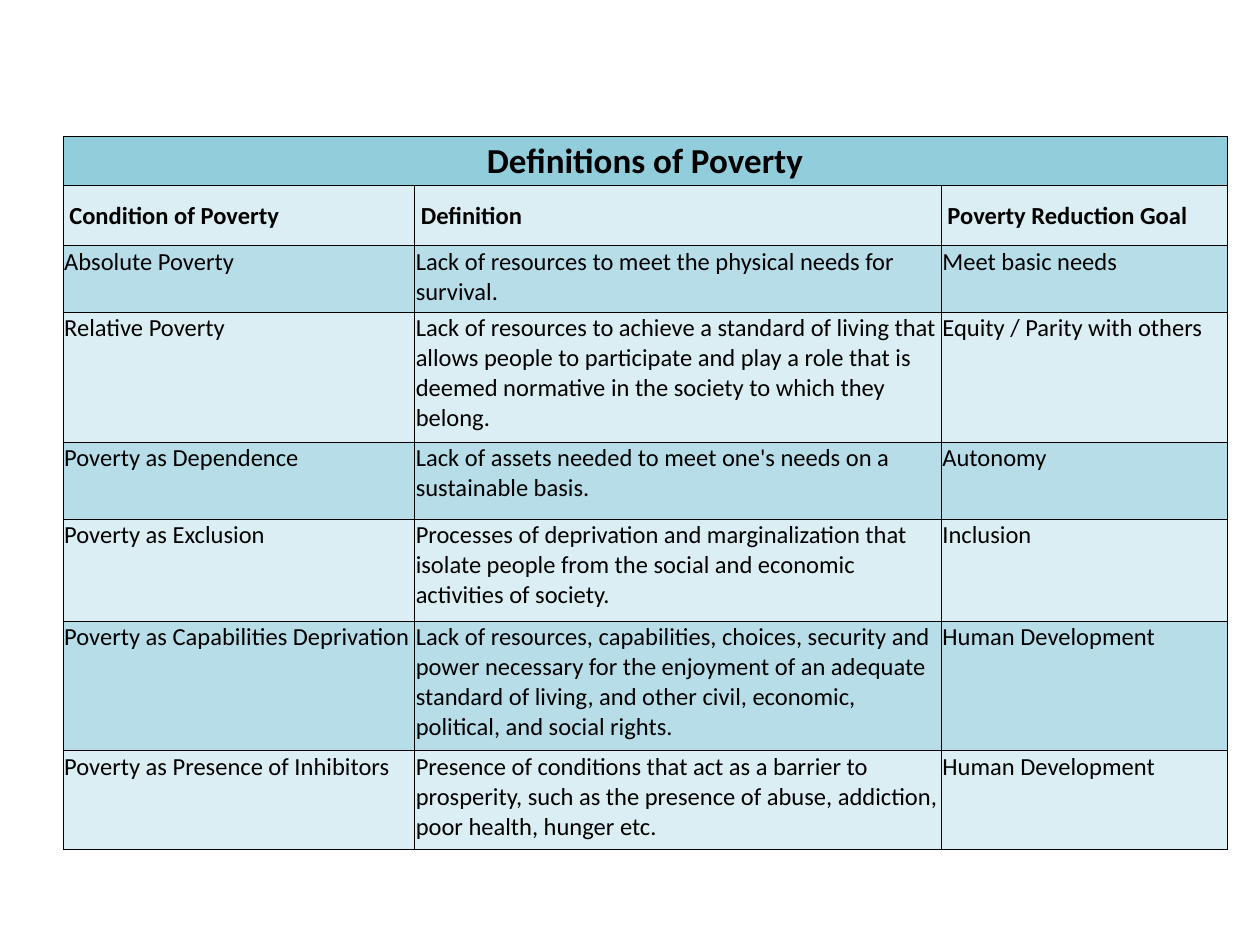
from dataclasses import dataclass

from lxml.etree import SubElement
from pptx import Presentation
from pptx.dml.color import RGBColor as RGB
from pptx.enum.text import MSO_ANCHOR as Anchor, PP_ALIGN as Align
from pptx.oxml.ns import qn
from pptx.table import _Cell as Cell
from pptx.util import Inches, Pt


@dataclass(frozen=True)
class Theme:
    font: str = "Calibri"
    text: str = "000000"
    border: str = "000000"
    title_fill: str = "92CDDC"
    dark_band: str = "B7DEE8"
    light_band: str = "DAEEF3"
    title_size: float = 20
    body_size: float = 14
    border_width: float = 0.5


@dataclass(frozen=True)
class CellStyle:
    fill: str
    size: float = 14
    bold: bool = False
    anchor: Anchor = Anchor.TOP
    align: Align = Align.LEFT
    indent: float = 0.01


@dataclass(frozen=True)
class Poverty:
    condition: str
    definition: str
    goal: str


THEME = Theme()
TITLE = CellStyle(THEME.title_fill, THEME.title_size, True, Anchor.MIDDLE, Align.CENTER)
HEADER = CellStyle(THEME.light_band, THEME.body_size, True, Anchor.MIDDLE, indent=0.05)
BANDS = (CellStyle(THEME.dark_band, THEME.body_size),
         CellStyle(THEME.light_band, THEME.body_size))

COL_WIDTHS = (2.79, 4.18, 2.27)
ROW_HEIGHTS = (0.39, 0.48, 0.53, 1.03, 0.61, 0.81, 1.03, 0.78)

HEADINGS = Poverty("Condition of Poverty", "Definition", "Poverty Reduction Goal")
POVERTIES = (
    Poverty("Absolute Poverty",
            "Lack of resources to meet the physical needs for survival.",
            "Meet basic needs"),
    Poverty("Relative Poverty",
            "Lack of resources to achieve a standard of living that allows people to "
            "participate and play a role that is deemed normative in the society to "
            "which they belong.",
            "Equity / Parity with others"),
    Poverty("Poverty as Dependence",
            "Lack of assets needed to meet one's needs on a sustainable basis.",
            "Autonomy"),
    Poverty("Poverty as Exclusion",
            "Processes of deprivation and marginalization that isolate people from "
            "the social and economic activities of society.",
            "Inclusion"),
    Poverty("Poverty as Capabilities Deprivation",
            "Lack of resources, capabilities, choices, security and power necessary "
            "for the enjoyment of an adequate standard of living, and other civil, "
            "economic, political, and social rights.",
            "Human Development"),
    Poverty("Poverty as Presence of Inhibitors",
            "Presence of conditions that act as a barrier to prosperity, such as the "
            "presence of abuse, addiction, poor health, hunger etc.",
            "Human Development"),
)


def format_cell(cell: Cell, style: CellStyle) -> None:
    """Set the borders, fill, margins and anchor of a cell."""
    tc_pr = cell._tc.get_or_add_tcPr()
    for side in ("lnL", "lnR", "lnT", "lnB"):
        ln = SubElement(tc_pr, qn(f"a:{side}"), w=str(Pt(THEME.border_width)))
        fill = SubElement(ln, qn("a:solidFill"))
        SubElement(fill, qn("a:srgbClr"), val=THEME.border)
    cell.fill.solid()
    cell.fill.fore_color.rgb = RGB.from_string(style.fill)
    layout = {
        "margin_left": Inches(style.indent),
        "margin_right": Inches(0.01),
        "margin_top": Inches(0.01),
        "margin_bottom": 0,
        "vertical_anchor": style.anchor,
    }
    for name, value in layout.items():
        setattr(cell, name, value)


def write_cell(cell: Cell, text: str, style: CellStyle) -> None:
    """Put one formatted run of text in a cell."""
    p = cell.text_frame.paragraphs[0]
    p.alignment = style.align
    r = p.add_run()
    r.text = text
    font = {"name": THEME.font, "size": Pt(style.size), "bold": style.bold}
    for name, value in font.items():
        setattr(r.font, name, value)
    r.font.color.rgb = RGB.from_string(THEME.text)


def main() -> None:
    prs = Presentation()
    prs.slide_width, prs.slide_height = Inches(10), Inches(7.5)
    s = prs.slides.add_slide(prs.slide_layouts[6])

    # Table grid
    table = s.shapes.add_table(
        len(ROW_HEIGHTS), len(COL_WIDTHS), Inches(0.5), Inches(1.08),
        Inches(sum(COL_WIDTHS)), Inches(sum(ROW_HEIGHTS))).table
    for column, width in zip(table.columns, COL_WIDTHS):
        column.width = Inches(width)
    for row, height in zip(table.rows, ROW_HEIGHTS):
        row.height = Inches(height)

    # Title row across all columns
    for cell in table.rows[0].cells:
        format_cell(cell, TITLE)
    table.cell(0, 0).merge(table.cell(0, len(COL_WIDTHS) - 1))
    write_cell(table.cell(0, 0), "Definitions of Poverty", TITLE)

    # Headings, then banded rows
    for i, entry in enumerate((HEADINGS, *POVERTIES)):
        style = HEADER if i == 0 else BANDS[(i - 1) % 2]
        texts = (entry.condition, entry.definition, entry.goal)
        for j, text in enumerate(texts):
            cell = table.cell(i + 1, j)
            format_cell(cell, style)
            write_cell(cell, text, style)

    prs.save("out.pptx")


if __name__ == "__main__":
    main()
